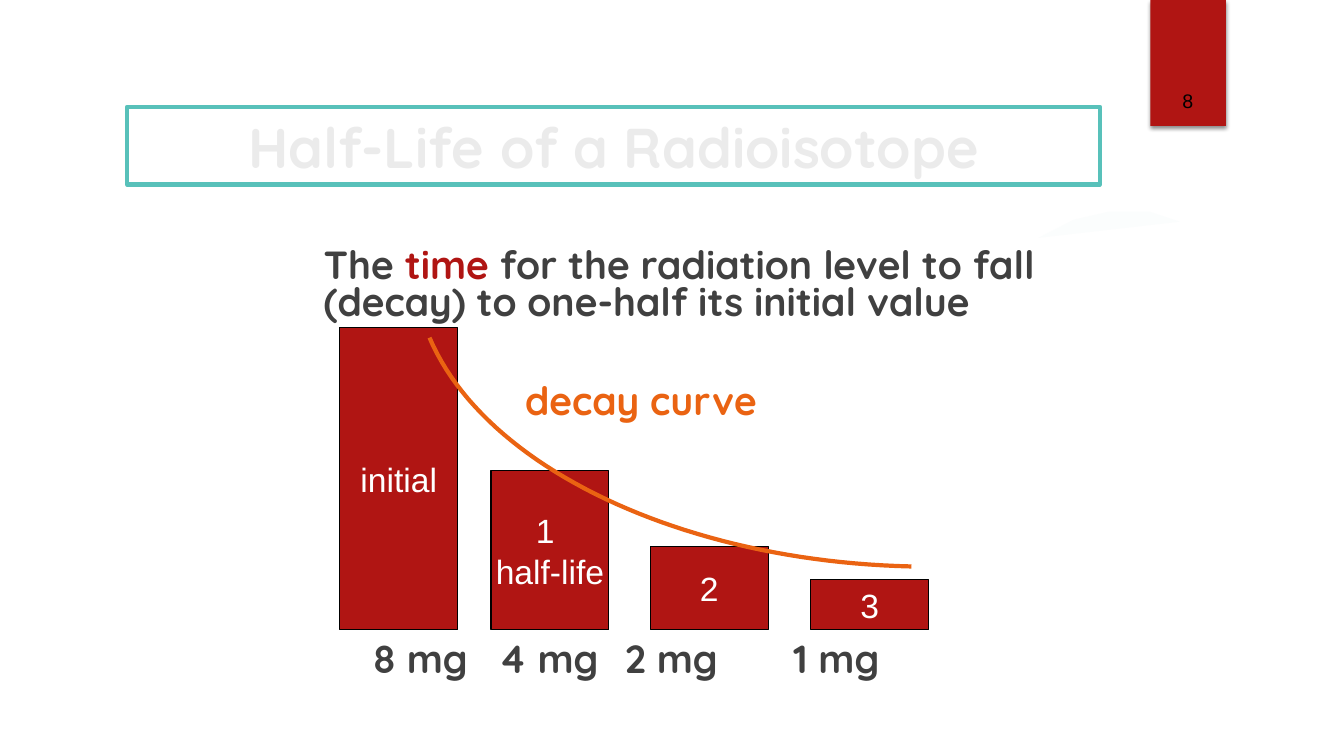
from lxml import etree
from pptx import Presentation
from pptx.dml.color import RGBColor
from pptx.enum.shapes import MSO_SHAPE
from pptx.enum.text import MSO_ANCHOR, MSO_AUTO_SIZE, PP_ALIGN
from pptx.oxml import parse_xml
from pptx.oxml.ns import nsdecls, qn
from pptx.util import Inches, Pt

RED = RGBColor(0xB0, 0x15, 0x13)
ORANGE = RGBColor(0xEA, 0x63, 0x12)
TEAL = RGBColor(0x58, 0xC1, 0xBA)
MIST = RGBColor(0xFB, 0xFD, 0xFD)
PALE = RGBColor(0xEB, 0xEB, 0xEB)
DARK = RGBColor(0x40, 0x40, 0x40)
BLACK = RGBColor(0, 0, 0)
WHITE = RGBColor(0xFF, 0xFF, 0xFF)

HEADING_FONT = "Quicksand"
LABEL_FONT = "Arial"

BASELINE = 6.25
BAR_WIDTH = 1.17
# left, height, bar label, amount, left of amount
HALF_LIVES = [
    (3.37, 3, "initial", "8 mg", 3.6),
    (4.87, 1.58, "1 \nhalf-life", "4 mg", 4.85),
    (6.45, 0.83, "2", "2 mg", 6.1),
    (8.04, 0.5, "3", "1 mg", 7.77),
]
DECAY_CONTROLS = [(4.26, 3.35), (4.81, 4.64), (6.77, 5.57), (9.04, 5.62)]
WISP = [(10.3, 2.36), (10.65, 2.18), (11, 2.1), (11.4, 2.1), (11.7, 2.2)]


def bezier(controls, steps=48):
    """Return points along a cubic Bezier curve."""
    points = []
    for step in range(steps + 1):
        t = step / steps
        weights = ((1 - t) ** 3, 3 * t * (1 - t) ** 2, 3 * t * t * (1 - t), t ** 3)
        points.append(tuple(
            sum(w * c[axis] for w, c in zip(weights, controls)) for axis in (0, 1)
        ))
    return points


class DecaySlide:
    def __init__(self, slide):
        self.slide = slide
        self.shapes = slide.shapes

    def place(self, shape, left, top, width, height):
        shape.left, shape.top = Inches(left), Inches(top)
        shape.width, shape.height = Inches(width), Inches(height)

    def style(self, frame, font, size, color, bold=False, align=PP_ALIGN.LEFT,
              anchor=MSO_ANCHOR.TOP, spacing=None):
        frame.auto_size = MSO_AUTO_SIZE.NONE
        frame.vertical_anchor = anchor
        for paragraph in frame.paragraphs:
            paragraph.alignment = align
            paragraph.space_before = Pt(0)
            if spacing:
                paragraph.line_spacing = spacing
            for run in paragraph.runs:
                run.font.name = font
                run.font.size = Pt(size)
                run.font.bold = bold
                run.font.color.rgb = color

    def title(self, text):
        title = self.shapes.title
        self.place(title, 1.26, 1.06, 9.65, 0.77)
        title.line.color.rgb = TEAL
        title.line.width = Pt(3)
        title.text_frame.text = text
        self.style(title.text_frame, HEADING_FONT, 40, PALE, True,
                   PP_ALIGN.CENTER, MSO_ANCHOR.MIDDLE)

    def definition(self, before, keyword, after):
        body = self.slide.placeholders[1]
        self.place(body, 3.11, 2.42, 8.1, 0.85)
        paragraph = body.text_frame.paragraphs[0]
        properties = paragraph._p.get_or_add_pPr()
        properties.set("marL", "0")
        properties.set("indent", "0")
        etree.SubElement(properties, qn("a:buNone"))
        for part in (before, keyword, after):
            paragraph.add_run().text = part
        self.style(body.text_frame, HEADING_FONT, 28, DARK, True, spacing=0.8)
        paragraph.runs[1].font.color.rgb = RED

    def text(self, text, left, top, width, height, *style, **layout):
        box = self.shapes.add_textbox(
            Inches(left), Inches(top), Inches(width), Inches(height))
        box.text_frame.word_wrap = True
        box.text_frame.text = text
        self.style(box.text_frame, *style, **layout)

    def label(self, text, left, top, width, color):
        self.text(text, left, top, width, 0.5, HEADING_FONT, 28, color, True, spacing=0.8)

    def rectangle(self, left, top, width, height):
        rectangle = self.shapes.add_shape(
            MSO_SHAPE.RECTANGLE, Inches(left), Inches(top), Inches(width), Inches(height))
        rectangle.shadow.inherit = False
        rectangle.fill.solid()
        rectangle.fill.fore_color.rgb = RED
        rectangle.line.fill.background()
        return rectangle

    def page_tab(self, number):
        tab = self.rectangle(11.41, 0, 0.75, 1.25)
        tab._element.spPr.find(qn("a:effectLst")).append(parse_xml(
            f'<a:outerShdw {nsdecls("a")} blurRad="38100" dist="25400" dir="5400000" '
            'rotWithShape="0"><a:srgbClr val="000000"><a:alpha val="45000"/>'
            '</a:srgbClr></a:outerShdw>'))
        self.text(number, 11.32, 0.32, 0.92, 0.84, LABEL_FONT, 14, BLACK,
                  align=PP_ALIGN.CENTER, anchor=MSO_ANCHOR.BOTTOM)

    def bar(self, left, height, text):
        bar = self.rectangle(left, BASELINE - height, BAR_WIDTH, height)
        bar.line.color.rgb = BLACK
        bar.line.width = Pt(0.75)
        bar.text_frame.word_wrap = False
        bar.text_frame.text = text
        self.style(bar.text_frame, LABEL_FONT, 24, WHITE,
                   align=PP_ALIGN.CENTER, anchor=MSO_ANCHOR.MIDDLE)

    def outline(self, points, close):
        start, *rest = [(Inches(x), Inches(y)) for x, y in points]
        builder = self.shapes.build_freeform(*start)
        builder.add_line_segments(rest, close=close)
        outline = builder.convert_to_shape()
        outline.shadow.inherit = False
        return outline

    def wisp(self, points):
        wisp = self.outline(points, close=True)
        wisp.fill.solid()
        wisp.fill.fore_color.rgb = MIST
        wisp.line.fill.background()

    def curve(self, controls):
        curve = self.outline(bezier(controls), close=False)
        curve.fill.background()
        curve.line.color.rgb = ORANGE
        curve.line.width = Pt(3)


def main():
    presentation = Presentation()
    presentation.slide_width = Inches(13.33)
    presentation.slide_height = Inches(7.5)
    slide = DecaySlide(presentation.slides.add_slide(presentation.slide_layouts[1]))

    slide.wisp(WISP)
    slide.page_tab("8")
    slide.title("Half-Life of a Radioisotope")
    slide.definition("The ", "time ",
                     "for the radiation level to fall (decay) to one-half its initial value")
    slide.label("decay curve", 5.11, 3.77, 3, ORANGE)
    for left, height, name, amount, amount_left in HALF_LIVES:
        slide.bar(left, height, name)
        slide.label(amount, amount_left, 6.33, 1.3, DARK)
    slide.curve(DECAY_CONTROLS)

    presentation.save("out.pptx")


if __name__ == "__main__":
    main()
